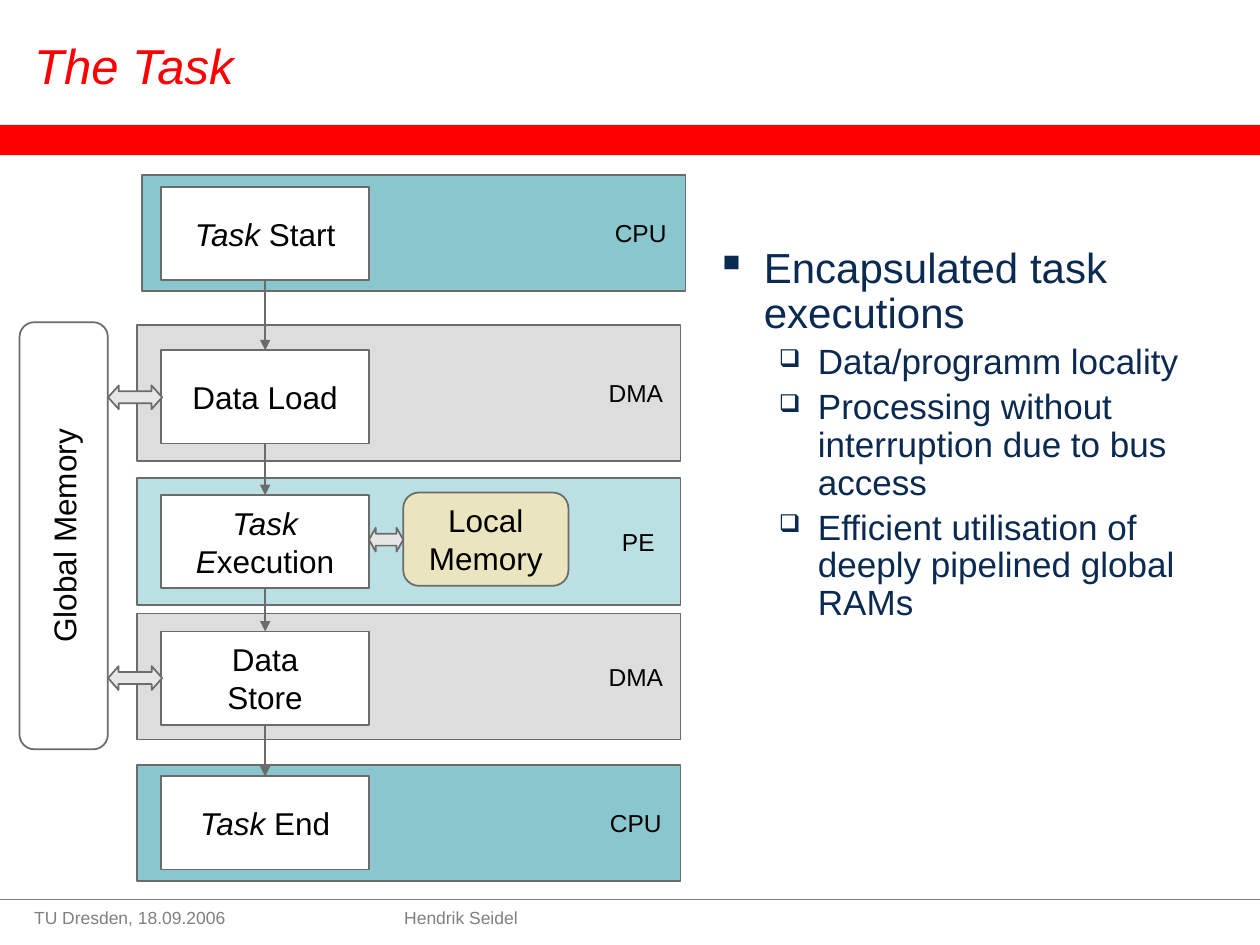
from lxml import etree
from pptx import Presentation
from pptx.enum import shapes, text
from pptx.oxml import ns
from pptx.util import Cm, Pt
from pptx.dml.color import RGBColor

HUES = {"red": "FF0000", "line": "6B6B6B", "teal": "8AC6CD", "pale": "BBE0E3",
        "grey": "DDDDDD", "arrow": "E6E6E6", "sand": "EBE5BF", "white": "FFFFFF",
        "black": "000000", "navy": "0B2A51", "foot": "808080"}

# Content: lane label, fill, left, top, height, right inset; box top, italic and plain text
STEPS = [
    ("CPU", "teal", 2.87, 3.53, 2.34, 0.38, 3.77, "Task", " Start"),
    ("DMA", "grey", 2.77, 6.55, 2.74, 0.35, 7.06, "", "Data Load"),
    ("PE", "pale", 2.77, 9.63, 2.57, 0.52, 9.98, "Task E", "xecution"),
    ("DMA", "grey", 2.77, 12.37, 2.54, 0.35, 12.73, "", "Data\vStore"),
    ("CPU", "teal", 2.77, 15.42, 2.34, 0.38, 15.65, "Task", " End"),
]
LANE_W, BOX_X, BOX_W, BOX_H = 10.95, 3.25, 4.19, 1.88

# Double arrows: left, top, width, head ratio
LINKS = [(7.44, 10.64, 0.69, 0.28), (2.18, 7.77, 1.09, 0.45), (2.18, 13.43, 1.09, 0.44)]

POINTS = [
    (0, "Encapsulated task executions"),
    (1, "Data/programm locality"),
    (1, "Processing without interruption due to bus access"),
    (1, "Efficient utilisation of deeply pipelined global RAMs"),
]
# Per level: bullet, bullet size, margin, indent, text size
LEVELS = [("▪", 100, 0.97, -0.97, 24), ("❑", 70, 2.06, -0.79, 20)]
FEET = [("TU Dresden, 18.09.2006", 0.69, 5.72), ("Hendrik Seidel", 8.15, 9.09)]

KIND = shapes.MSO_SHAPE
ALIGN = text.PP_ALIGN
MID = text.MSO_ANCHOR.MIDDLE

deck = Presentation()
deck.slide_width, deck.slide_height = Cm(25.4), Cm(19.05)
page = deck.slides.add_slide(deck.slide_layouts[6])


def hue(name):
    return RGBColor.from_string(HUES[name])


def style(font, size, name="black"):
    font.name, font.size = "Arial", Pt(size)
    font.color.rgb = hue(name)


def inset(frame, left, top, right, low):
    frame.margin_left, frame.margin_top = Cm(left), Cm(top)
    frame.margin_right, frame.margin_bottom = Cm(right), Cm(low)


def shape(kind, area, fill, edge="line"):
    item = page.shapes.add_shape(kind, *map(Cm, area))
    item.shadow.inherit = False
    item.fill.solid()
    item.fill.fore_color.rgb = hue(fill)
    if edge:
        item.line.color.rgb = hue(edge)
        item.line.width = Pt(1)
    else:
        item.line.fill.background()
    return item


def label(item, words, size=18, align=ALIGN.CENTER, wrap=True):
    frame = item.text_frame
    frame.word_wrap, frame.vertical_anchor = wrap, MID
    frame.text = words
    para = frame.paragraphs[0]
    para.alignment = align
    for run in para.runs:
        style(run.font, size)
    return para


def note(words, area, size, name):
    frame = page.shapes.add_textbox(*map(Cm, area)).text_frame
    frame.word_wrap = True
    frame.text = words
    inset(frame, 0, 0, 0, 0)
    run = frame.paragraphs[0].runs[0]
    style(run.font, size, name)
    return frame, run


def line(start, end, name, width):
    item = page.shapes.add_connector(shapes.MSO_CONNECTOR.STRAIGHT, *map(Cm, start + end))
    item.line.color.rgb = hue(name)
    item.line.width = Pt(width)
    etree.SubElement(item._element.spPr, ns.qn("a:effectLst"))
    return item


# Title, red bar and footer
shape(KIND.RECTANGLE, (0, 2.52, 25.4, 0.61), "red", None)
line((0, 18.13), (25.4, 18.13), "foot", 0.75)
for words, left, width in FEET:
    note(words, (left, 18.29, width, 0.74), 10, "foot")
frame, run = note("The Task", (0.69, 0.41, 18.8, 1.8), 28, "red")
inset(frame, 0, 0.13, 0.25, 0.13)
frame.vertical_anchor = MID
run.font.italic = True

# Lanes, each with its label at the right
for tag, fill, left, top, high, gap, *_ in STEPS:
    lane = shape(KIND.RECTANGLE, (left, top, LANE_W, high), fill)
    inset(lane.text_frame, 0.1, 0.1, gap, 0.1)
    label(lane, tag, 14, ALIGN.RIGHT)

# Memories
store = shape(KIND.ROUNDED_RECTANGLE, (-3.02, 9.91, 8.61, 1.78), "white")
store.rotation = 270
label(store, "Global Memory", wrap=False)
local = shape(KIND.ROUNDED_RECTANGLE, (8.13, 9.93, 3.33, BOX_H), "sand")
label(local, "Local\vMemory", wrap=False)

# Step boxes
boxes = []
for *_, top, slant, plain in STEPS:
    box = shape(KIND.RECTANGLE, (BOX_X, top, BOX_W, BOX_H), "white")
    para = label(box, slant or plain)
    if slant:
        para.runs[0].font.italic = True
        run = para.add_run()
        run.text = plain
        style(run.font, 18)
    boxes.append(box)

# Flow from step to step
for above, below in zip(boxes, boxes[1:]):
    flow = line((0, 0), (0, 0), "line", 1)
    flow.begin_connect(above, 2)
    flow.end_connect(below, 0)
    etree.SubElement(flow.line._get_or_add_ln(), ns.qn("a:tailEnd"), type="triangle")

# Memory links
for left, top, width, head in LINKS:
    link = shape(KIND.LEFT_RIGHT_ARROW, (left, top, width, 0.48), "arrow")
    link.adjustments[0], link.adjustments[1] = 0.5, head

# Bullet list
frame = page.shapes.add_textbox(Cm(14.43), Cm(4.85), Cm(10.49), Cm(12.98)).text_frame
frame.word_wrap = True
inset(frame, 0, 0.13, 0.25, 0.13)
for i, (level, words) in enumerate(POINTS):
    mark, scale, margin, indent, size = LEVELS[level]
    para = frame.add_paragraph() if i else frame.paragraphs[0]
    para.text = words
    para.level = level
    props = para._p.get_or_add_pPr()
    props.set("marL", str(Cm(margin)))
    props.set("indent", str(Cm(indent)))
    etree.SubElement(props, ns.qn("a:buSzPct"), val=str(scale * 1000))
    etree.SubElement(props, ns.qn("a:buChar"), char=mark)
    para.line_spacing = 0.9
    para.space_before = Pt(size * 0.2 if i else 0)
    style(para.runs[0].font, size, "navy")

deck.save("out.pptx")
